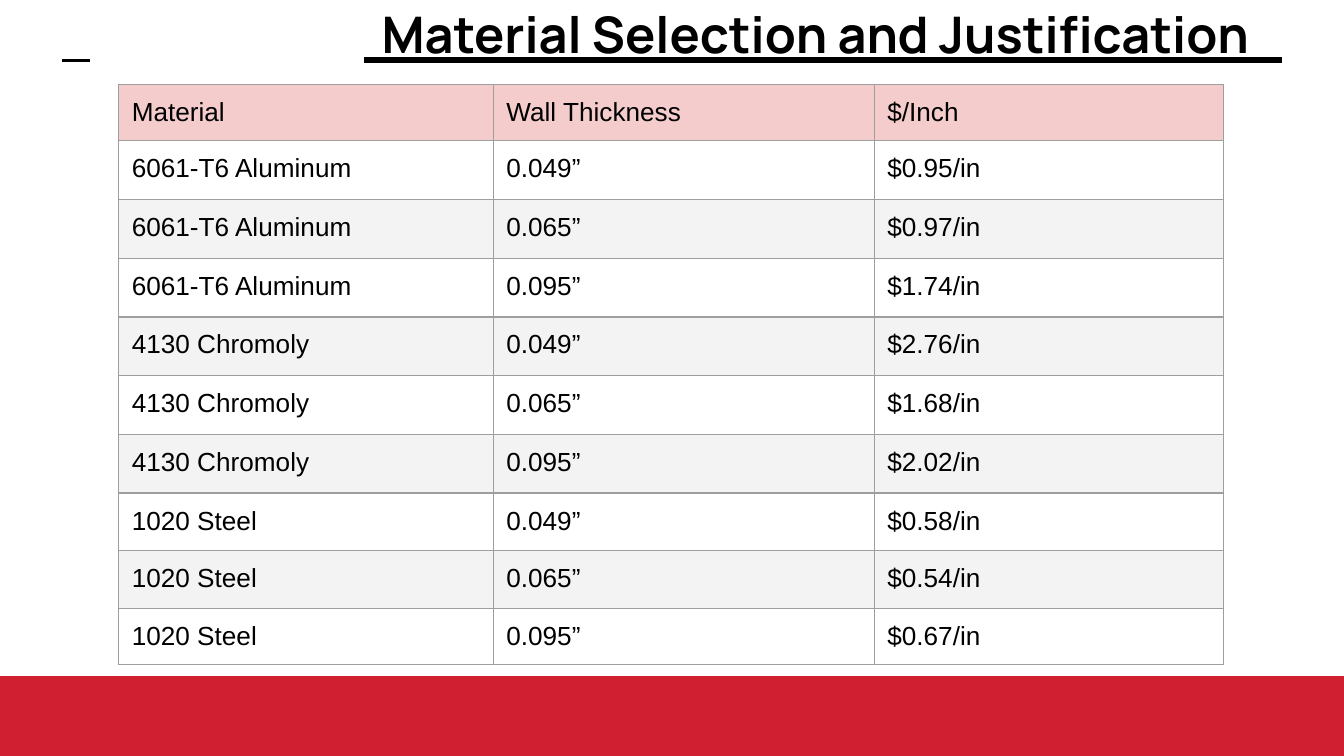
from itertools import product
from typing import NamedTuple

from lxml.etree import SubElement
from pptx import Presentation
from pptx.dml.color import RGBColor
from pptx.enum.shapes import MSO_CONNECTOR, MSO_SHAPE
from pptx.enum.text import MSO_ANCHOR, PP_ALIGN
from pptx.oxml.ns import qn
from pptx.util import Cm, Pt

BLACK, RED, PINK, GREY, BORDER = "000000", "D01F31", "F4CCCC", "F3F3F3", "9E9E9E"
INSET = 0.25


class Rule(NamedTuple):
    left: float
    right: float
    weight: float


RULE_Y = 1.14
RULES = [Rule(6.88, 24.23, 3), Rule(1.18, 1.7, 1.5)]

HEADER = ("Material", "Wall Thickness", "$/Inch")
THICKNESSES = ("0.049”", "0.065”", "0.095”")
PRICES = {
    "6061-T6 Aluminum": ("$0.95/in", "$0.97/in", "$1.74/in"),
    "4130 Chromoly": ("$2.76/in", "$1.68/in", "$2.02/in"),
    "1020 Steel": ("$0.58/in", "$0.54/in", "$0.67/in"),
}
COL_WIDTHS = (7.08, 7.2, 6.6)
ROW_HEIGHTS = (1.06, *[1.11] * 6, *[1.09] * 2, 1.06)


def rgb(value: str) -> RGBColor:
    return RGBColor.from_string(value)


def format_font(font, **values) -> None:
    for name, value in values.items():
        setattr(font, name, value)
    font.color.rgb = rgb(BLACK)


def set_insets(target) -> None:
    for side in ("left", "top", "right", "bottom"):
        setattr(target, f"margin_{side}", Cm(INSET))


def add_title(s, text: str) -> None:
    title = s.shapes.title
    box = {"left": 6.96, "top": -0.25, "width": 17.55, "height": 1.75}
    for name, value in box.items():
        setattr(title, name, Cm(value))
    tf = title.text_frame
    set_insets(tf)
    tf.vertical_anchor = MSO_ANCHOR.MIDDLE
    p = tf.paragraphs[0]
    p.alignment = PP_ALIGN.LEFT
    r = p.add_run()
    r.text = text
    format_font(r.font, name="Manrope", size=Pt(27), bold=True)


def add_rule(s, rule: Rule) -> None:
    line = s.shapes.add_connector(
        MSO_CONNECTOR.STRAIGHT, Cm(rule.left), Cm(RULE_Y), Cm(rule.right), Cm(RULE_Y)
    )
    line.line.color.rgb = rgb(BLACK)
    line.line.width = Pt(rule.weight)
    SubElement(line._element.spPr, qn("a:effectLst"))


def add_footer_band(s, width: int, height: int) -> None:
    top = Cm(12.78)
    band = s.shapes.add_shape(MSO_SHAPE.RECTANGLE, 0, top, width, height - top)
    band.shadow.inherit = False
    band.fill.solid()
    band.fill.fore_color.rgb = rgb(RED)
    band.line.fill.background()


def add_borders(cell) -> None:
    tc_pr = cell._tc.get_or_add_tcPr()
    for side in ("lnL", "lnR", "lnT", "lnB"):
        ln = SubElement(tc_pr, qn(f"a:{side}"), w=str(Pt(0.75)))
        fill = SubElement(ln, qn("a:solidFill"))
        SubElement(fill, qn("a:srgbClr"), val=BORDER)


def format_cell(cell, text: str, row: int) -> None:
    set_insets(cell)
    add_borders(cell)
    if row % 2:
        cell.fill.background()
    else:
        cell.fill.solid()
        cell.fill.fore_color.rgb = rgb(GREY if row else PINK)
    r = cell.text_frame.paragraphs[0].add_run()
    r.text = text
    format_font(r.font, name="Arial", size=Pt(14), bold=False)


def add_price_table(s) -> None:
    rows = [HEADER]
    for material, prices in PRICES.items():
        rows += [(material, *pair) for pair in zip(THICKNESSES, prices)]
    table = s.shapes.add_table(
        len(rows), len(HEADER), Cm(2.24), Cm(1.6),
        Cm(sum(COL_WIDTHS)), Cm(sum(ROW_HEIGHTS)),
    ).table
    for column, width in zip(table.columns, COL_WIDTHS):
        column.width = Cm(width)
    for row, height in zip(table.rows, ROW_HEIGHTS):
        row.height = Cm(height)
    for i, j in product(range(len(rows)), range(len(HEADER))):
        format_cell(table.cell(i, j), rows[i][j], i)


def main() -> None:
    prs = Presentation()
    prs.slide_width, prs.slide_height = Cm(25.4), Cm(14.29)
    s = prs.slides.add_slide(prs.slide_layouts[5])
    add_title(s, "Material Selection and Justification")
    for rule in RULES:
        add_rule(s, rule)
    add_footer_band(s, prs.slide_width, prs.slide_height)
    add_price_table(s)
    prs.save("out.pptx")


if __name__ == "__main__":
    main()
